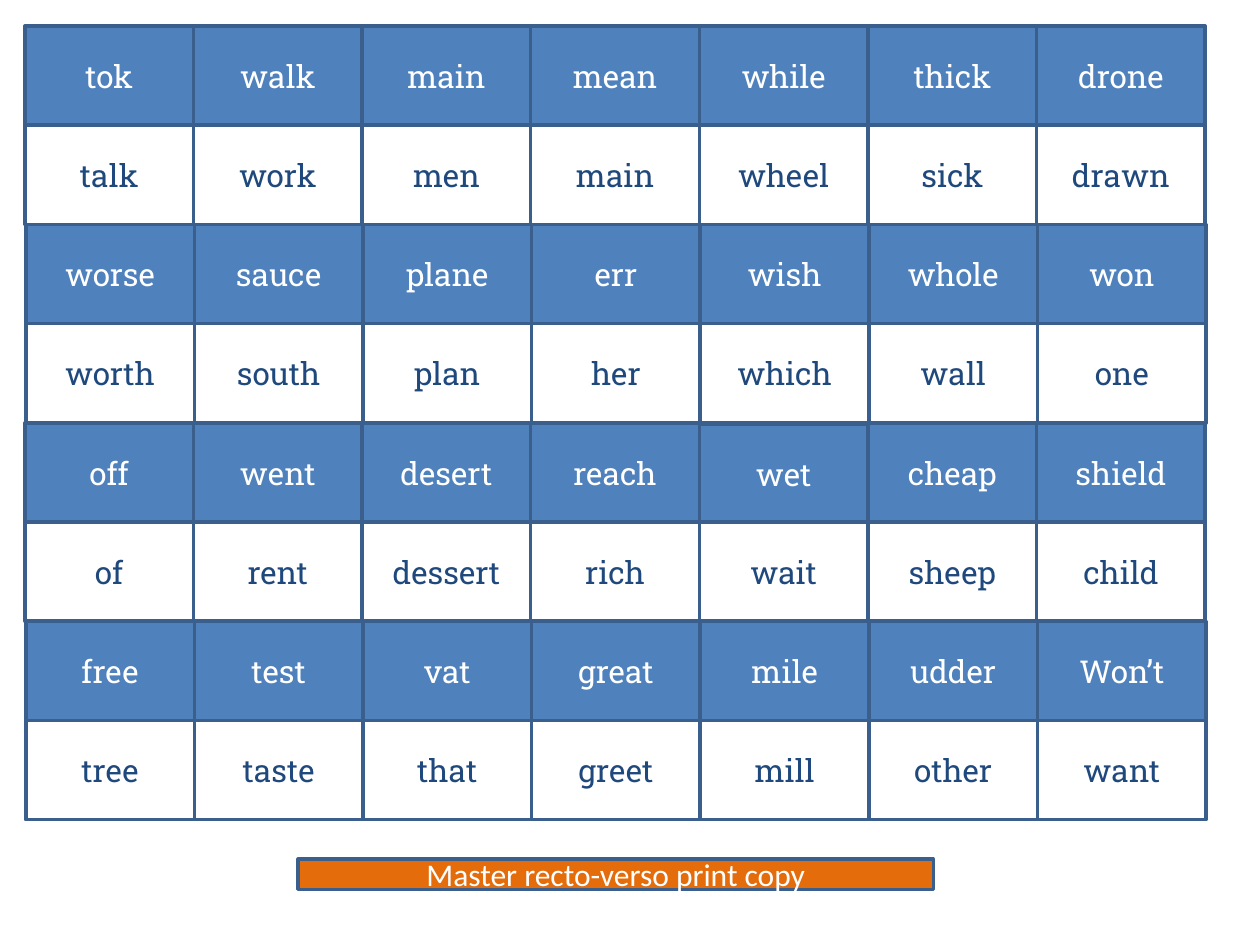
from pptx import Presentation
from pptx.dml.color import RGBColor
from pptx.enum.shapes import MSO_SHAPE
from pptx.enum.text import MSO_ANCHOR, PP_ALIGN
from pptx.util import Pt

COLORS = {
    "blue": "4F81BD",
    "navy": "1F497D",
    "border": "3A5F8C",
    "orange": "E46C0A",
    "white": "FFFFFF",
}

presentation = Presentation()
presentation.slide_width, presentation.slide_height = Pt(720), Pt(540)
slide = presentation.slides.add_slide(presentation.slide_layouts[6])


def add_box(text, *, left, top, width, height, fill, color, font="Roboto Slab", size=18):
    shape = slide.shapes.add_shape(
        MSO_SHAPE.RECTANGLE, Pt(left), Pt(top), Pt(width), Pt(height))
    shape.shadow.inherit = False
    shape.fill.solid()
    shape.fill.fore_color.rgb = RGBColor.from_string(COLORS[fill])
    shape.line.color.rgb = RGBColor.from_string(COLORS["border"])
    shape.line.width = Pt(2)
    frame = shape.text_frame
    frame.word_wrap = True
    frame.vertical_anchor = MSO_ANCHOR.MIDDLE
    paragraph = frame.paragraphs[0]
    paragraph.alignment = PP_ALIGN.CENTER
    run = paragraph.add_run()
    run.text = text
    run.font.name = font
    run.font.size = Pt(size)
    run.font.color.rgb = RGBColor.from_string(COLORS[color])


# Word pairs: blue card above, white card below
CARD_WIDTH, CARD_HEIGHT = 96.36, 56.69
GRID_LEFT, GRID_TOP = 14.2, 14.9
BAND_SHIFT = 0.5  # every second band sits slightly to the right

bands = [
    ("tok walk main mean while thick drone",
     "talk work men main wheel sick drawn"),
    ("worse sauce plane err wish whole won",
     "worth south plan her which wall one"),
    ("off went desert reach wet cheap shield",
     "of rent dessert rich wait sheep child"),
    ("free test vat great mile udder Won’t",
     "tree taste that greet mill other want"),
]
styles = [("blue", "white"), ("white", "navy")]

for band in (0, 2, 1, 3):  # stacking order, back to front
    pairs = zip(*(words.split() for words in bands[band]))
    for column, pair in enumerate(pairs):
        for row, (word, (fill, color)) in enumerate(zip(pair, styles)):
            nudge = 0.6 if word == "wet" else 0
            add_box(word,
                    left=GRID_LEFT + column * CARD_WIDTH + band % 2 * BAND_SHIFT,
                    top=GRID_TOP + (2 * band + row) * CARD_HEIGHT + nudge,
                    width=CARD_WIDTH, height=CARD_HEIGHT,
                    fill=fill, color=color)

# Caption bar
add_box("Master recto-verso print copy", left=170.4, top=491, width=363, height=17.2,
        fill="orange", color="white", font="Calibri")

presentation.save("out.pptx")
